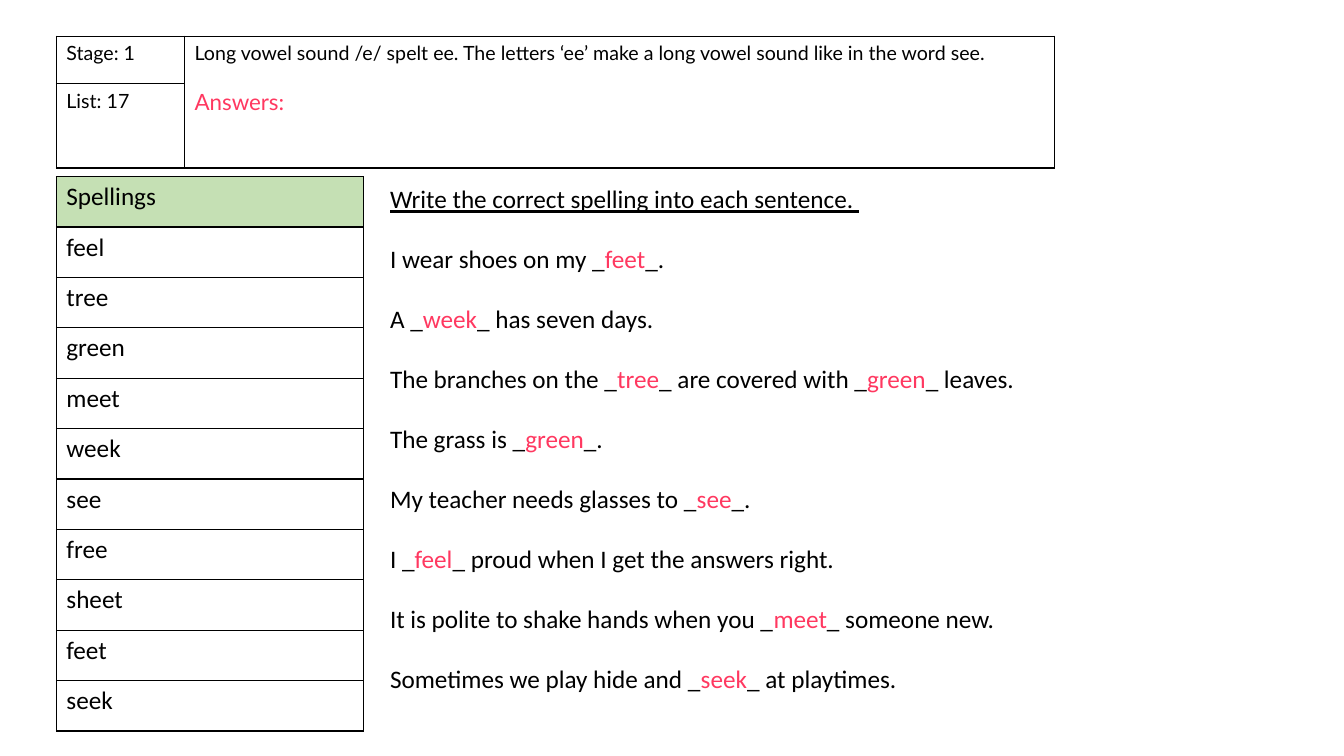
from pptx import Presentation
from pptx.dml.color import RGBColor
from pptx.enum.text import MSO_AUTO_SIZE
from pptx.oxml import parse_xml
from pptx.oxml.ns import nsdecls
from pptx.util import Cm, Pt

FIT = MSO_AUTO_SIZE.SHAPE_TO_FIT_TEXT
BLACK = RGBColor(0x00, 0x00, 0x00)
PINK = RGBColor(0xFF, 0x38, 0x60)
GREEN = RGBColor(0xC5, 0xE0, 0xB4)
BODY, HEAD = "Calibri", "Lato"

# Content
STAGE, LIST = "Stage: 1", "List: 17"
RULE = ("Long vowel sound /e/ spelt ee. The letters ‘ee’ make a long "
        "vowel sound like in the word see.")
NOTE = "Answers:"
WORDS = ["Spellings", "feel", "tree", "green", "meet", "week",
         "see", "free", "sheet", "feet", "seek"]
TASK = "Write the correct spelling into each sentence. "
# Answers stand between underscores
LINES = [
    "I wear shoes on my _feet_.",
    "A _week_ has seven days.",
    "The branches on the _tree_ are covered with _green_ leaves.",
    "The grass is _green_.",
    "My teacher needs glasses to _see_.",
    "I _feel_ proud when I get the answers right.",
    "It is polite to shake hands when you _meet_ someone new.",
    "Sometimes we play hide and _seek_ at playtimes.",
]


def add_run(para, text, size, color=BLACK, face=BODY):
    run = para.add_run()
    run.text = text
    run.font.size = Pt(size)
    run.font.name = face
    run.font.color.rgb = color
    return run


def add_grid(slide, left, top, cols, rows):
    """Plain table with black cell borders; sizes in cm."""
    frame = slide.shapes.add_table(len(rows), len(cols), Cm(left), Cm(top),
                                   Cm(sum(cols)), Cm(sum(rows)))
    grid = frame.table
    grid.first_row = grid.horz_banding = False
    for col, width in zip(grid.columns, cols):
        col.width = Cm(width)
    for row, height in zip(grid.rows, rows):
        row.height = Cm(height)
    for cell in grid.iter_cells():
        props = cell._tc.get_or_add_tcPr()
        for side in "LRTB":
            props.append(parse_xml(
                f'<a:ln{side} {nsdecls("a")} w="12700"><a:solidFill>'
                f'<a:srgbClr val="{BLACK}"/></a:solidFill></a:ln{side}>'))
        cell.fill.background()
    return grid


def first(cell):
    return cell.text_frame.paragraphs[0]


deck = Presentation()
deck.slide_width, deck.slide_height = Cm(33.87), Cm(19.05)
slide = deck.slides.add_slide(deck.slide_layouts[6])

# Spelling list
LEFT = 1.42
words = add_grid(slide, LEFT, 4.45, [7.75], [1.27] * len(WORDS))
for i, word in enumerate(WORDS):
    add_run(first(words.cell(i, 0)), word, 18)
words.cell(0, 0).fill.solid()
words.cell(0, 0).fill.fore_color.rgb = GREEN

# Header
header = add_grid(slide, LEFT, 0.91, [3.23, 21.92], [1.2, 1.2])
info = header.cell(0, 1)
info.merge(header.cell(1, 1))
add_run(first(header.cell(0, 0)), STAGE, 14, face=HEAD)
add_run(first(header.cell(1, 0)), LIST, 14, face=HEAD)
add_run(first(info), RULE, 14, face=HEAD)
note = info.text_frame.add_paragraph()
note.space_before = Pt(17)
add_run(note, NOTE, 16, PINK, HEAD)

# Sentences
box = slide.shapes.add_textbox(Cm(9.58), Cm(4.5), Cm(24.2), Cm(13.5))
text = box.text_frame
text.word_wrap = True
text.auto_size = FIT
add_run(text.paragraphs[0], TASK, 18).font.underline = True
for line in LINES:
    para = text.add_paragraph()
    para.space_before = Pt(21.2)
    parts = line.split("_")
    for i, part in enumerate(parts):
        if i % 2:
            add_run(para, part, 18, PINK)
        else:
            start = "_" if i else ""
            end = "_" if i < len(parts) - 1 else ""
            add_run(para, start + part + end, 18)

deck.save("out.pptx")
